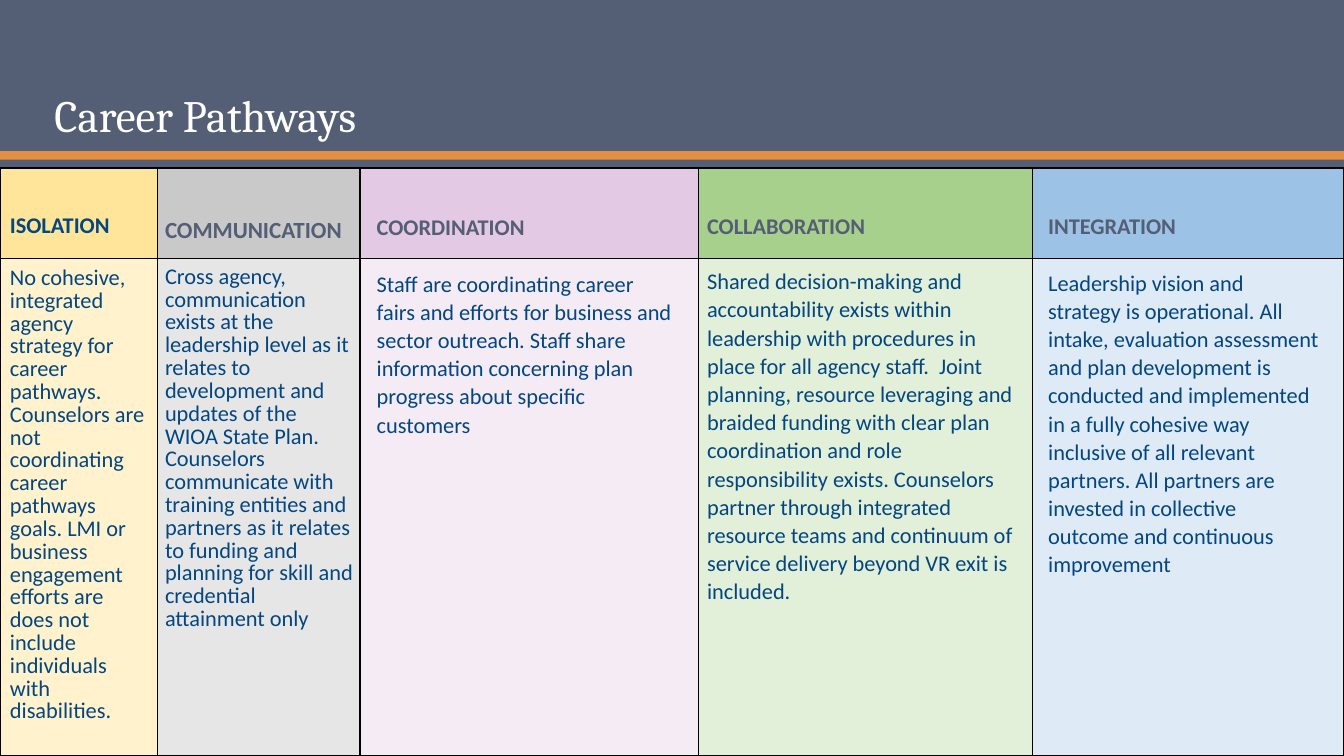
"""Build the Career Pathways slide: five stages, from isolation to integration."""
from dataclasses import dataclass

from lxml import etree
from pptx import Presentation
from pptx.dml.color import RGBColor
from pptx.enum import shapes, text
from pptx.oxml import ns
from pptx.util import Pt

SLIDE_W, SLIDE_H = 960, 540
SLATE, ORANGE, NAVY, WHITE, BLACK = "545E74", "E38E41", "034680", "FFFFFF", "000000"
TABLE_TOP = 120
ROW_HEIGHTS = (64.8, 355.2)


@dataclass(frozen=True)
class Bar:
    top: float
    height: float
    color: str


@dataclass(frozen=True)
class Stage:
    heading: str
    body: str
    column_width: float
    head_fill: str
    body_fill: str
    left: float
    top: float
    width: float
    height: float
    spacing: float = 1.05
    gap: float = 20.5
    heading_size: float = 16
    heading_color: str = SLATE


BARS = (Bar(0, 108, SLATE), Bar(108, 6.2, ORANGE), Bar(114, 6.2, SLATE))

STAGES = (
    Stage("ISOLATION",
          "No cohesive, integrated agency strategy for career pathways. Counselors are not "
          "coordinating career pathways goals. LMI or business engagement efforts are does not "
          "include individuals with disabilities.",
          112.4, "FFE599", "FFF2CC", 0, 150.5, 114.5, 380,
          spacing=0.85, heading_color=NAVY),
    Stage("COMMUNICATION",
          "Cross agency, communication exists at the leadership level as it relates to "
          "development and updates of the WIOA State Plan. Counselors communicate with training "
          "entities and partners as it relates to funding and planning for skill and credential "
          "attainment only",
          144.8, "C9C9C9", "E7E6E6", 110.8, 153.2, 149, 310,
          spacing=0.85, gap=16.5, heading_size=16.5),
    Stage("COORDINATION",
          "Staff are coordinating career fairs and efforts for business and sector outreach. "
          "Staff share information concerning plan progress about specific customers",
          242, "E3C9E3", "F5EBF5", 262, 147.6, 226, 310),
    Stage("COLLABORATION",
          "Shared decision-making and accountability exists within leadership with procedures in "
          "place for all agency staff.  Joint planning, resource leveraging and braided funding "
          "with clear plan coordination and role responsibility exists. Counselors partner "
          "through integrated resource teams and continuum of service delivery beyond VR exit is "
          "included.",
          238.2, "A8D08D", "E2EFD9", 498, 146.9, 233.3, 367, gap=19.5),
    Stage("INTEGRATION",
          "Leadership vision and strategy is operational. All intake, evaluation assessment and "
          "plan development is conducted and implemented in a fully cohesive way inclusive of "
          "all relevant partners. All partners are invested in collective outcome and continuous "
          "improvement",
          222.6, "9CC2E5", "DEEAF6", 741.6, 146.9, 209.5, 367),
)


def rgb(value: str) -> RGBColor:
    return RGBColor.from_string(value)


def add_run(p, words: str, font: str, size: float, color: str, bold: bool = False) -> None:
    r = p.add_run()
    r.text = words
    r.font.name, r.font.size, r.font.bold = font, Pt(size), bold
    r.font.color.rgb = rgb(color)


def add_bar(s, bar: Bar) -> None:
    sp = s.shapes.add_shape(shapes.MSO_SHAPE.RECTANGLE,
                            0, Pt(bar.top), Pt(SLIDE_W), Pt(bar.height))
    sp.shadow.inherit = False
    sp.fill.solid()
    sp.fill.fore_color.rgb = rgb(bar.color)
    sp.line.fill.background()


def add_title(s, words: str) -> None:
    sp = s.shapes.title
    sp.element.getparent().append(sp.element)
    sp.left, sp.top, sp.width, sp.height = Pt(31.7), Pt(23.8), Pt(826.6), Pt(81.4)
    tf = sp.text_frame
    tf.vertical_anchor = text.MSO_ANCHOR.BOTTOM
    p = tf.paragraphs[0]
    p.alignment = text.PP_ALIGN.LEFT
    p.line_spacing = 0.9
    add_run(p, words, "Cambria", 32, WHITE)


def format_cell(cell, fill: str) -> None:
    tc_pr = cell._tc.get_or_add_tcPr()
    for side in ("a:lnL", "a:lnR", "a:lnT", "a:lnB"):
        line = etree.SubElement(tc_pr, ns.qn(side), w=str(Pt(1)))
        solid = etree.SubElement(line, ns.qn("a:solidFill"))
        etree.SubElement(solid, ns.qn("a:srgbClr"), val=BLACK)
    cell.fill.solid()
    cell.fill.fore_color.rgb = rgb(fill)


def add_stage_table(s) -> None:
    table = s.shapes.add_table(len(ROW_HEIGHTS), len(STAGES), 0, Pt(TABLE_TOP),
                               Pt(SLIDE_W), Pt(sum(ROW_HEIGHTS))).table
    for row, height in zip(table.rows, ROW_HEIGHTS):
        row.height = Pt(height)
    for i, stage in enumerate(STAGES):
        table.columns[i].width = Pt(stage.column_width)
        format_cell(table.cell(0, i), stage.head_fill)
        format_cell(table.cell(1, i), stage.body_fill)


def add_stage_text(s, stage: Stage) -> None:
    sp = s.shapes.add_textbox(Pt(stage.left), Pt(stage.top), Pt(stage.width), Pt(stage.height))
    tf = sp.text_frame
    tf.word_wrap = True
    p = tf.paragraphs[0]
    p.line_spacing = stage.spacing
    add_run(p, stage.heading, "Calibri", stage.heading_size, stage.heading_color, bold=True)
    p = tf.add_paragraph()
    p.line_spacing = stage.spacing
    p.space_before = Pt(stage.gap)
    add_run(p, stage.body, "Calibri", 16, NAVY)


def main() -> None:
    prs = Presentation()
    prs.slide_width, prs.slide_height = Pt(SLIDE_W), Pt(SLIDE_H)
    s = prs.slides.add_slide(prs.slide_layouts.get_by_name("Title Only"))
    for bar in BARS:
        add_bar(s, bar)
    add_title(s, "Career Pathways")
    add_stage_table(s)
    for stage in STAGES:
        add_stage_text(s, stage)
    prs.save("out.pptx")


if __name__ == "__main__":
    main()
